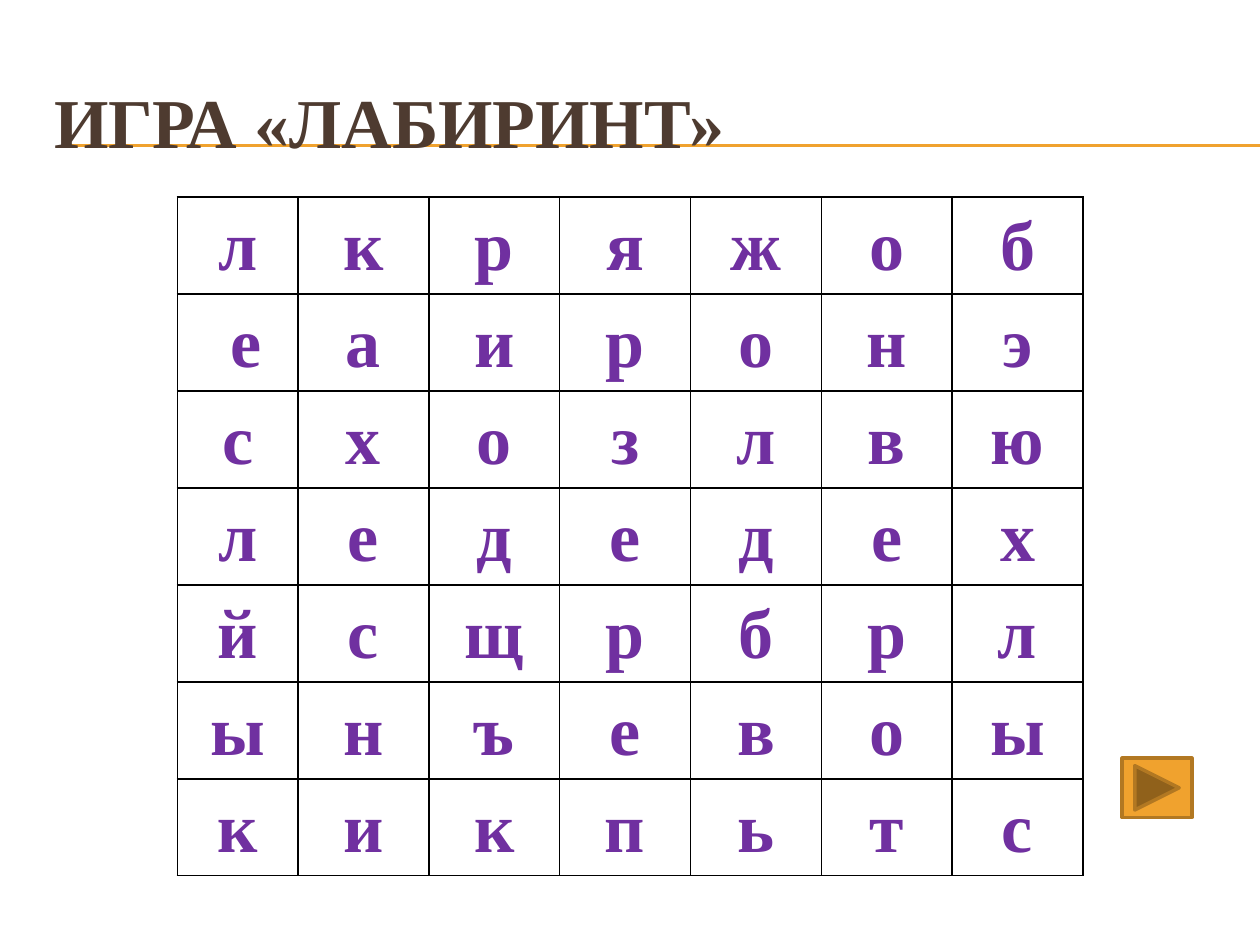
from dataclasses import dataclass

import pptx
import pptx.dml.color
import pptx.enum.shapes
import pptx.enum.text
import pptx.oxml
import pptx.oxml.ns
import pptx.util

Pt = pptx.util.Pt
RGB = pptx.dml.color.RGBColor.from_string


@dataclass(frozen=True)
class Theme:
    font: str = "Times New Roman"
    size: int = 40
    title: str = "4E3B30"
    letter: str = "7030A0"
    accent: str = "F0A22E"
    accent_dark: str = "B27822"
    grid: str = "000000"


THEME = Theme()
LETTERS = [
    ["л", "к", "р", "я", "ж", "о", "б"],
    [" е", "а", "и", "р", "о", "н", "э"],
    ["с", "х", "о", "з", "л", "в", "ю"],
    ["л", "е", "д", "е", "д", "е", "х"],
    ["й", "с", "щ", "р", "б", "р", "л"],
    ["ы", "н", "ъ", "е", "в", "о", "ы"],
    ["к", "и", "к", "п", "ь", "т", "с"],
]


def add_run(p, text, color):
    r = p.add_run()
    r.text = text
    r.font.name = THEME.font
    r.font.size = Pt(THEME.size)
    r.font.bold = True
    r.font.color.rgb = RGB(color)


def add_rules(s, x, y, w, gap):
    for line_y in (y, y + gap):
        line = s.shapes.add_connector(
            pptx.enum.shapes.MSO_CONNECTOR.STRAIGHT,
            Pt(x), Pt(line_y), Pt(x + w), Pt(line_y))
        line.line.color.rgb = RGB(THEME.accent)
        line.line.width = Pt(0.75)
        pptx.oxml.ns.qn("a:effectLst")
        line.element.spPr.append(pptx.oxml.parse_xml(
            f'<a:effectLst {pptx.oxml.ns.nsdecls("a")}/>'))


def add_title(s, x, y, w, h):
    tf = s.shapes.add_textbox(Pt(x), Pt(y), Pt(w), Pt(h)).text_frame
    tf.word_wrap = True
    tf.vertical_anchor = pptx.enum.text.MSO_ANCHOR.MIDDLE
    add_run(tf.paragraphs[0], "ИГРА «ЛАБИРИНТ»", THEME.title)


def add_borders(cell):
    tc_pr = cell._tc.get_or_add_tcPr()
    for i, side in enumerate(("lnL", "lnR", "lnT", "lnB")):
        tc_pr.insert(i, pptx.oxml.parse_xml(
            f'<a:{side} {pptx.oxml.ns.nsdecls("a")} w="{Pt(1)}"><a:solidFill>'
            f'<a:srgbClr val="{THEME.grid}"/></a:solidFill></a:{side}>'))


def fill_cell(cell, letter):
    cell.fill.background()
    cell.margin_left = cell.margin_right = Pt(5)
    cell.margin_top = cell.margin_bottom = Pt(0)
    p = cell.text_frame.paragraphs[0]
    p.alignment = pptx.enum.text.PP_ALIGN.CENTER
    p.line_spacing = 1.15
    add_run(p, letter, THEME.letter)
    add_borders(cell)


def add_letter_grid(s, x, y, w, h, first_col):
    rows, cols = len(LETTERS), len(LETTERS[0])
    table = s.shapes.add_table(rows, cols, Pt(x), Pt(y), Pt(w), Pt(h)).table
    table.first_row = table.horz_banding = False
    for i, col in enumerate(table.columns):
        col.width = Pt((w - first_col) / (cols - 1) if i else first_col)
    for row, letters in zip(table.rows, LETTERS):
        row.height = Pt(h / rows)
        for cell, letter in zip(row.cells, letters):
            fill_cell(cell, letter)


def add_next_button(s, x, y, w, h):
    sp = s.shapes.add_shape(
        pptx.enum.shapes.MSO_SHAPE.ACTION_BUTTON_FORWARD_OR_NEXT,
        Pt(x), Pt(y), Pt(w), Pt(h))
    sp.shadow.inherit = False
    sp.fill.solid()
    sp.fill.fore_color.rgb = RGB(THEME.accent)
    sp.line.color.rgb = RGB(THEME.accent_dark)
    sp.line.width = Pt(2)


def main():
    prs = pptx.Presentation()
    prs.slide_width, prs.slide_height = Pt(720), Pt(540)
    s = prs.slides.add_slide(prs.slide_layouts[6])
    add_rules(s, 40.3, 82.8, 679.7, 0.6)
    add_title(s, 23.8, 36, 684, 66)
    add_letter_grid(s, 101.3, 112.5, 517.5, 388, 69)
    add_next_button(s, 641.2, 433.3, 39.9, 33.8)
    prs.save("out.pptx")


if __name__ == "__main__":
    main()
